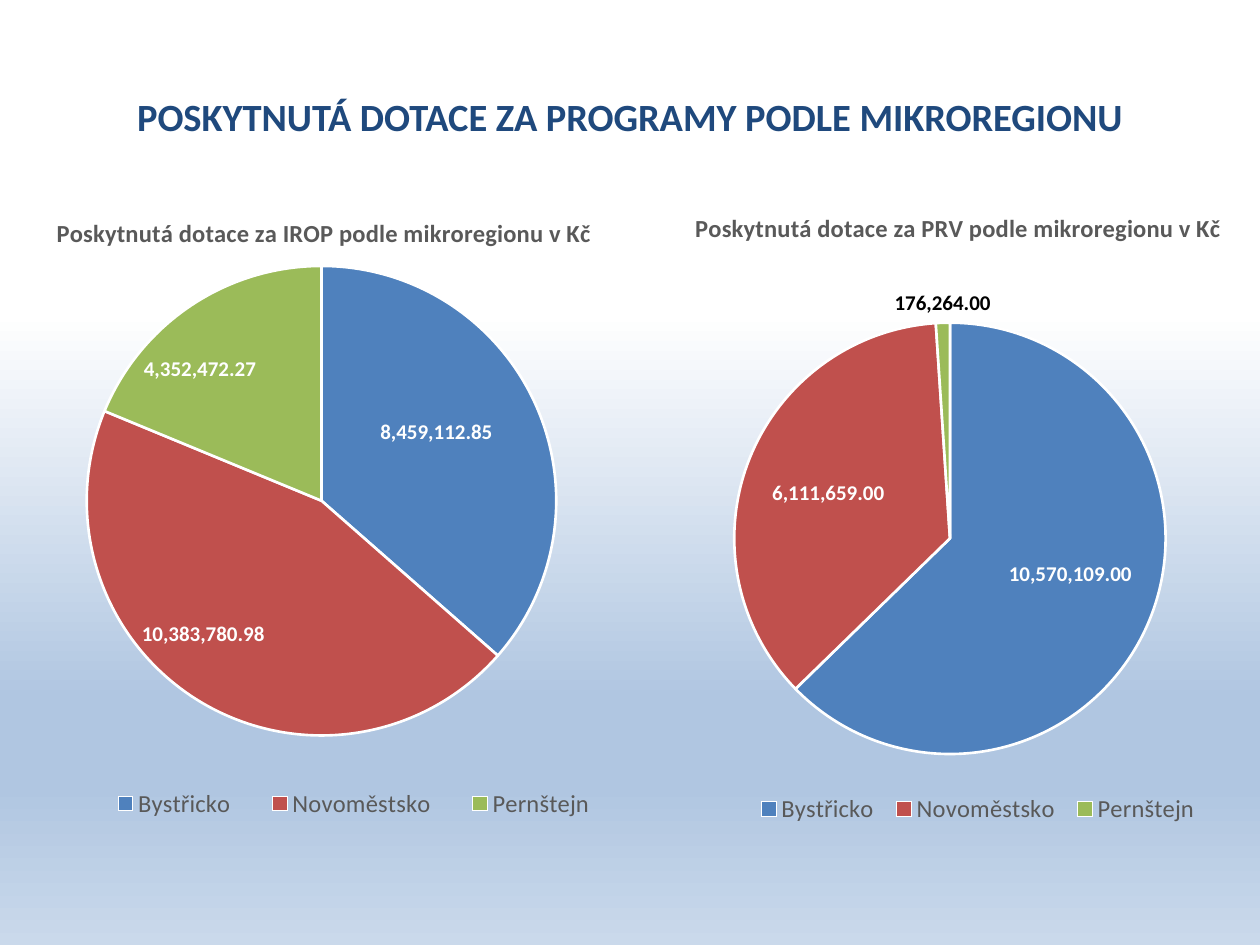
from dataclasses import dataclass
from typing import Any, Optional

from lxml import etree
from pptx import Presentation, util as u
from pptx.chart.data import CategoryChartData
from pptx.dml.color import RGBColor
from pptx.enum import chart as ch, text
from pptx.oxml.ns import qn


@dataclass(frozen=True)
class Theme:
    face: str = "Calibri"
    navy: str = "1F497D"
    gray: str = "595959"
    white: str = "FFFFFF"
    black: str = "000000"
    hues: tuple = ("4F81BD", "C0504D", "9BBB59")
    stops: tuple = ((33, "FFFFFF"), (74, "B0C6E1"), (83, "B0C6E1"), (100, "CAD9EB"))
    head: int = 22
    label: int = 12
    note: int = 14


@dataclass(frozen=True)
class Pie:
    """Box in cm; title, plot and legend places as shares of the box."""
    title: str
    box: tuple
    vals: tuple
    head: tuple
    plot: tuple
    key: tuple
    # Shift of each label from its slice's middle; None sets it outside
    shifts: tuple[Optional[tuple], ...]


T = Theme()
NUM = "#,##0.00"
AREAS = ("Bystřicko", "Novoměstsko", "Pernštejn")
PIES = (
    Pie("Poskytnutá dotace za IROP podle mikroregionu v Kč",
        (0.89, 3.99, 16.21, 13.72), (8459112.85, 10383780.98, 4352472.27),
        (0.01, 0.02), (0.05, 0.1, 0.59, 0.69), (0.05, 0.85, 0.67, 0.08),
        ((0.01, -0.03), (-0.07, 0.05), (-0.07, -0.05))),
    Pie("Poskytnutá dotace za PRV podle mikroregionu v Kč",
        (12.09, 3.91, 14.12, 12.98), (10570109, 6111659, 176264),
        (0.13, 0.02), (0.19, 0.2, 0.62, 0.67), (0.21, 0.92, 0.66, 0.07),
        ((0.03, -0.01), (-0.03, -0.01), None)),
)


def apply(obj: Any, **vals: Any) -> None:
    for name, val in vals.items():
        setattr(obj, name, val)


def style(font: Any, size: int, color: str, bold: bool = False) -> None:
    apply(font, name=T.face, size=u.Pt(size), bold=bold)
    font.color.rgb = RGBColor.from_string(color)


def place(node: Any, at: int, spot: tuple, shift: bool = False,
          inner: bool = False) -> None:
    """Give a chart part a manual layout as its child number `at`."""
    for old in node.findall(qn("c:layout")):
        node.remove(old)
    lay = etree.Element(qn("c:layout"))
    man = etree.SubElement(lay, qn("c:manualLayout"))
    marks = [("layoutTarget", "inner")] if inner else []
    if not shift:
        marks += [("xMode", "edge"), ("yMode", "edge")]
    marks += zip("xywh", spot)
    for tag, val in marks:
        etree.SubElement(man, qn("c:" + tag)).set("val", str(val))
    node.insert(at, lay)


def draw_back(slide: Any) -> None:
    fill = slide.background.fill
    fill.gradient()
    fill.gradient_angle = 270
    stops = slide._element.find(".//" + qn("a:gsLst"))
    for old in list(stops):
        stops.remove(old)
    for pos, color in T.stops:
        stop = etree.SubElement(stops, qn("a:gs"), pos=str(pos * 1000))
        etree.SubElement(stop, qn("a:srgbClr"), val=color)


def draw_title(slide: Any, words: str) -> None:
    head = slide.shapes.title
    apply(head, left=u.Cm(1.27), top=u.Cm(0.76), width=u.Cm(22.86), height=u.Cm(3.18))
    frame = head.text_frame
    frame.text = words
    frame.vertical_anchor = text.MSO_ANCHOR.MIDDLE
    para = frame.paragraphs[0]
    para.alignment = text.PP_ALIGN.CENTER
    style(para.runs[0].font, T.head, T.navy, True)


def draw_slice(point: Any, color: str, shift: Optional[tuple]) -> None:
    point.format.fill.solid()
    point.format.fill.fore_color.rgb = RGBColor.from_string(color)
    line = point.format.line
    line.width = u.Pt(1.5)
    line.color.rgb = RGBColor.from_string(T.white)
    # Value label
    label = point.data_label
    spot = ch.XL_LABEL_POSITION
    style(label.font, T.label, T.white if shift else T.black, True)
    label.position = spot.CENTER if shift else spot.OUTSIDE_END
    node = label._dLbl
    form = etree.Element(qn("c:numFmt"), formatCode=NUM, sourceLinked="0")
    node.insert(1, form)
    if shift:
        place(node, 1, shift, shift=True)


def draw_pie(slide: Any, pie: Pie) -> None:
    data = CategoryChartData(number_format=NUM)
    data.categories = AREAS
    data.add_series("Dotace", pie.vals)
    chart = slide.shapes.add_chart(
        ch.XL_CHART_TYPE.PIE, *map(u.Cm, pie.box), data).chart
    style(chart.font, 10, T.black)

    # Title
    chart.has_title = True
    frame = chart.chart_title.text_frame
    frame.text = pie.title
    style(frame.paragraphs[0].runs[0].font, T.note, T.gray, True)
    place(chart.chart_title._element, 1, pie.head)

    # Legend
    chart.has_legend = True
    key = chart.legend
    apply(key, position=ch.XL_LEGEND_POSITION.BOTTOM, include_in_layout=False)
    style(key.font, T.note, T.gray)
    place(key._element, 1, pie.key)

    # Slices and labels
    plot = chart.plots[0]
    plot.vary_by_categories = True
    plot.has_data_labels = True
    apply(plot.data_labels, show_value=True, number_format=NUM,
          number_format_is_linked=False)
    style(plot.data_labels.font, T.label, T.white, True)
    points = plot.series[0].points
    for i, (color, shift) in enumerate(zip(T.hues, pie.shifts)):
        draw_slice(points[i], color, shift)
    area = chart._chartSpace.find(".//" + qn("c:plotArea"))
    place(area, 0, pie.plot, inner=True)


def main() -> None:
    deck = Presentation()
    apply(deck, slide_width=u.Cm(25.4), slide_height=u.Cm(19.05))
    slide = deck.slides.add_slide(deck.slide_layouts[5])
    draw_back(slide)
    draw_title(slide, "POSKYTNUTÁ DOTACE ZA PROGRAMY PODLE MIKROREGIONU")
    for pie in PIES:
        draw_pie(slide, pie)
    deck.save("out.pptx")


if __name__ == "__main__":
    main()
